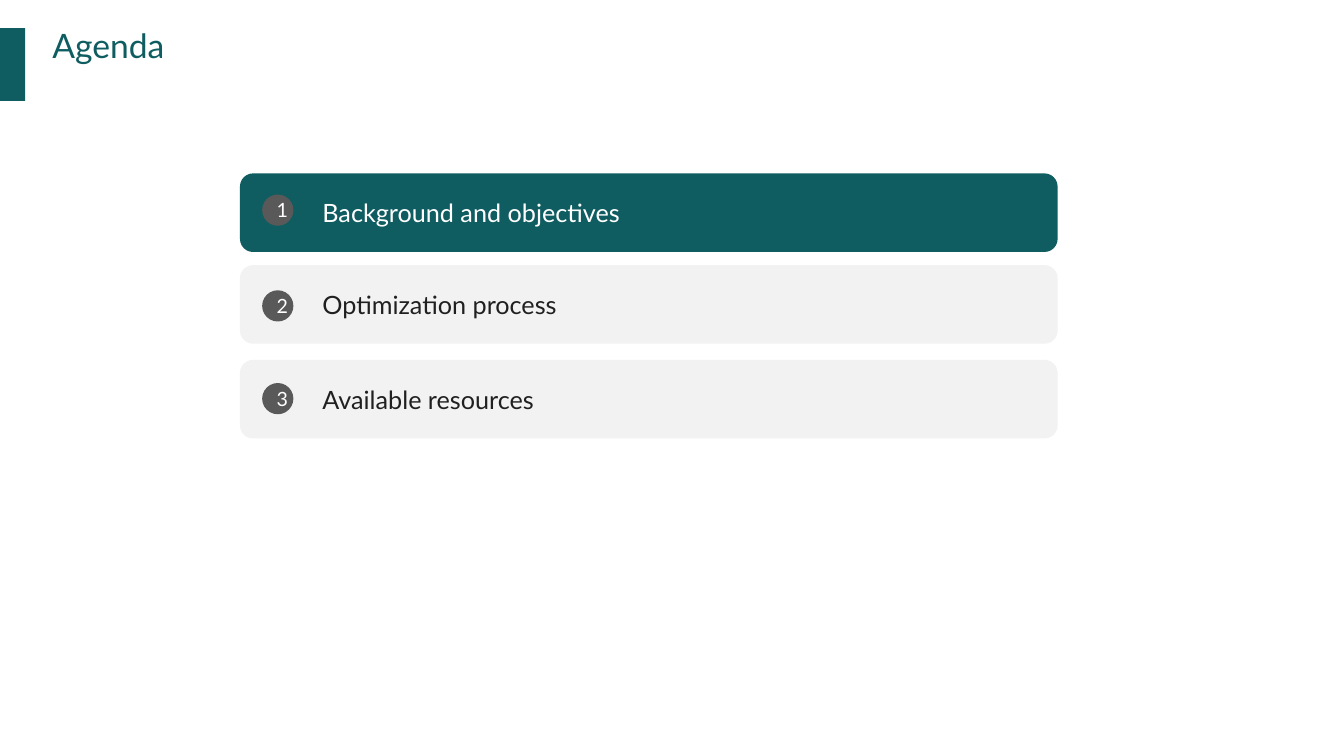
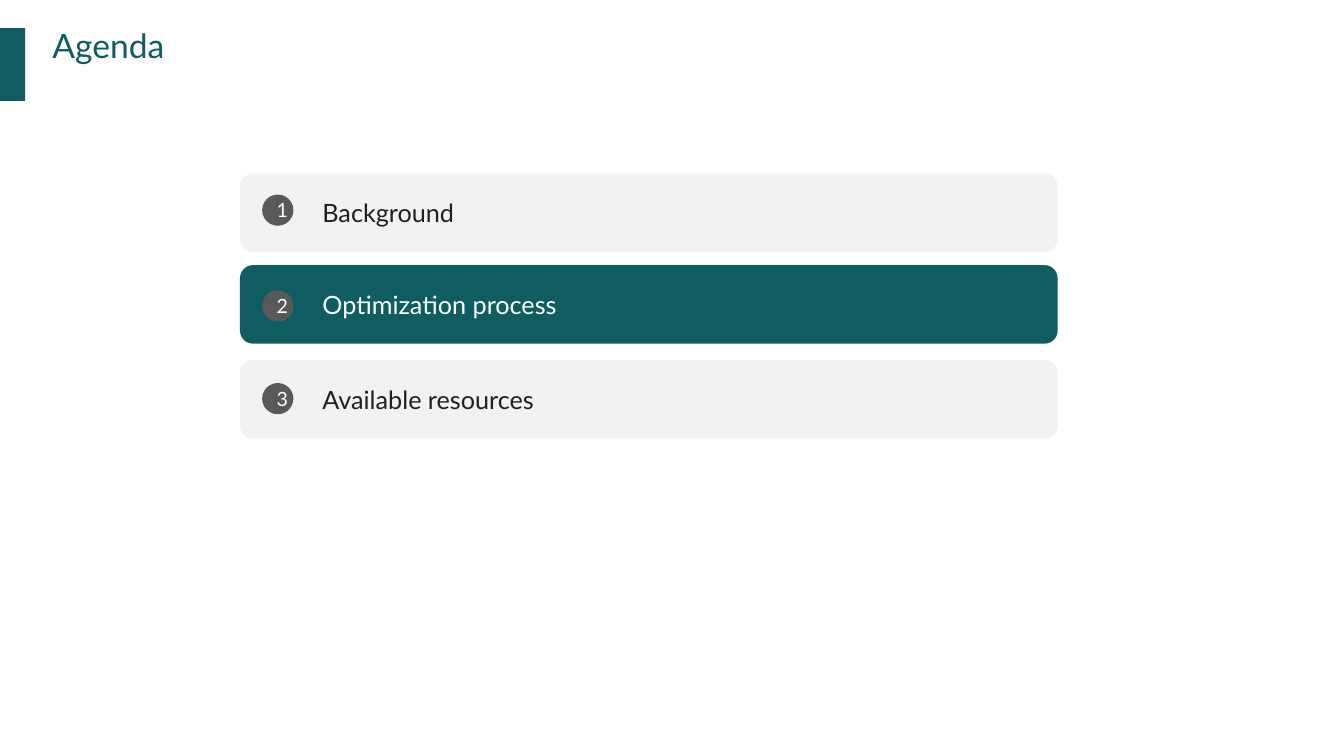
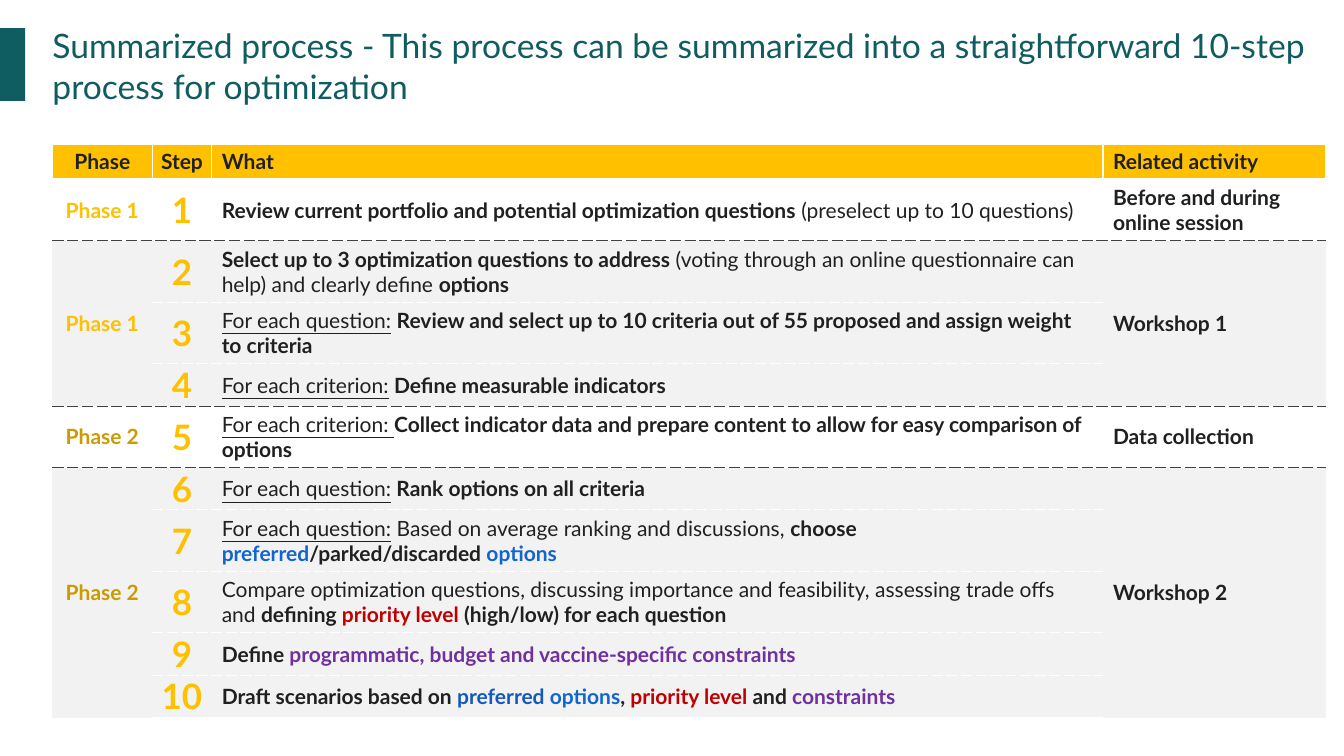
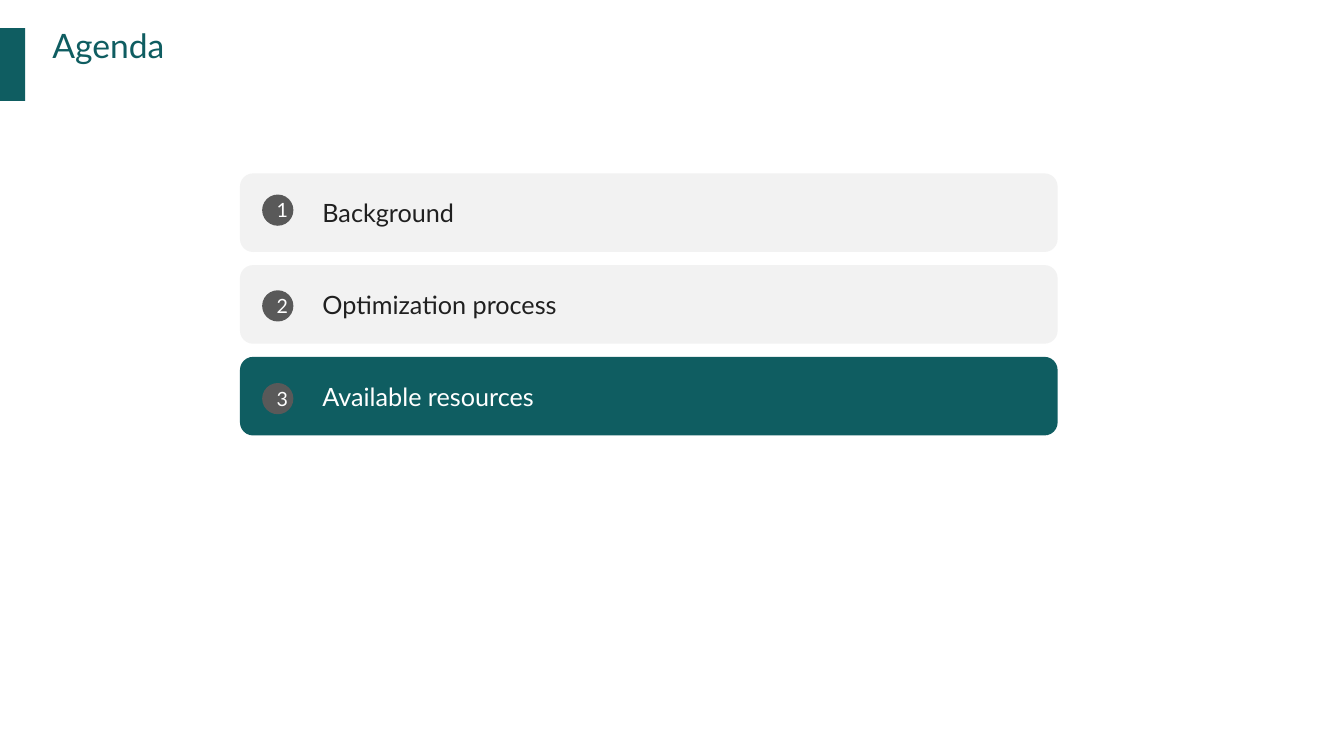
from pptx import Presentation
from pptx.dml.color import RGBColor
from pptx.enum.shapes import MSO_SHAPE
from pptx.enum.text import MSO_ANCHOR, PP_ALIGN
from pptx.oxml.ns import qn
from pptx.util import Inches, Pt
from lxml.etree import SubElement

FONT = "Lato"
TEAL = RGBColor(0x0F, 0x5D, 0x61)
WHITE = RGBColor(0xFF, 0xFF, 0xFF)
LIGHT = RGBColor(0xF2, 0xF2, 0xF2)
INK = RGBColor(0x20, 0x20, 0x20)
GRAY = RGBColor(0x59, 0x59, 0x59)
RULE = RGBColor(0x41, 0x41, 0x41)
AMBER = RGBColor(0xFF, 0xC0, 0x00)
OCHRE = RGBColor(0xCC, 0x9B, 0x00)
BLUE = RGBColor(0x10, 0x66, 0xD1)
DEEP_BLUE = RGBColor(0x14, 0x5A, 0xBE)
RED = RGBColor(0xC0, 0x00, 0x00)
PURPLE = RGBColor(0x70, 0x30, 0xA0)

AGENDA_BOX = (2.38, 1.72, 8.11, 0.78)
AGENDA_OFFSETS = (0, 0.91, 1.85)
EVEN_OFFSETS = (0, 0.91, 1.82)
BADGE_OFFSETS = (0.21, 1.16, 2.08)
BADGE_SIZE = 0.31

TABLE_BOX = (0.52, 1.43, 12.63, 5.68)
COLUMN_WIDTHS = (0.99, 0.59, 8.84, 2.21)
SHORT, TALL = 0.42, 0.61
ROW_HEIGHTS = (0.35, TALL, TALL, TALL, SHORT, TALL, SHORT, TALL, TALL, SHORT, SHORT)
HEADERS = ("Phase", "Step", "What", "Related activity")

HEADER_EDGE = (WHITE, 1, "solid")
HEADER_BASE = (WHITE, 3, "solid")
STEP_EDGE = (WHITE, 0.75, "sysDash")
GROUP_EDGE = (RULE, 0.75, "sysDash")


def strong(text, color=INK):
    return text, color, True, False


def plain(text):
    return text, INK, False, False


def under(text):
    return text, INK, False, True


GROUPS = (
    ("Phase 1", AMBER, WHITE, "Before and during online session", (
        (strong("Review current portfolio and potential optimization questions "),
         plain("(preselect up to 10 questions)")),
    )),
    ("Phase 1", AMBER, LIGHT, "Workshop 1", (
        (strong("Select up to 3 optimization questions to address "),
         plain("(voting through an online questionnaire can help) and clearly define "),
         strong("options")),
        (under("For each question:"), plain(" "),
         strong("Review and select up to 10 criteria out of 55 proposed and assign weight to criteria")),
        (under("For each criterion:"), plain(" "), strong("Define measurable indicators")),
    )),
    ("Phase 2", OCHRE, WHITE, "Data collection", (
        (under("For each criterion: "),
         strong("Collect indicator data and prepare content to allow for easy comparison of options")),
    )),
    ("Phase 2", OCHRE, LIGHT, "Workshop 2", (
        (under("For each question:"), strong(" Rank options on all criteria")),
        (under("For each question:"), plain(" Based on average ranking and discussions, "),
         strong("choose "), strong("preferred", BLUE), strong("/parked/discarded "),
         strong("options", BLUE)),
        (plain("Compare optimization questions, discussing importance and feasibility, "
               "assessing trade offs and "),
         strong("defining "), strong("priority level ", RED),
         strong("(high/low) for each question")),
        (strong("Define "),
         strong("programmatic, budget and vaccine-specific constraints", PURPLE)),
        (strong("Draft scenarios based on "), strong("preferred ", DEEP_BLUE),
         strong("options", BLUE), strong(", "), strong("priority level ", RED),
         strong("and "), strong("constraints", PURPLE)),
    )),
)


def write(paragraph, runs, size):
    for text, color, bold, underline in runs:
        run = paragraph.add_run()
        run.text = text
        run.font.name = FONT
        run.font.size = Pt(size)
        run.font.color.rgb = color
        run.font.bold = bold
        run.font.underline = underline


def add_block(slide, preset, box, fill):
    shape = slide.shapes.add_shape(preset, *map(Inches, box))
    shape.shadow.inherit = False
    shape.fill.solid()
    shape.fill.fore_color.rgb = fill
    shape.line.fill.background()
    return shape


def add_titled_slide(presentation, title):
    slide = presentation.slides.add_slide(presentation.slide_layouts[6])
    add_block(slide, MSO_SHAPE.RECTANGLE, (-0.01, 0.28, 0.26, 0.72), TEAL)
    text_frame = slide.shapes.add_textbox(*map(Inches, (0.52, 0.25, 12.55, 0.8))).text_frame
    text_frame.word_wrap = True
    text_frame.margin_left = text_frame.margin_right = 0
    text_frame.margin_top = text_frame.margin_bottom = 0
    write(text_frame.paragraphs[0], [(title, TEAL, False, False)], 24)
    return slide


def add_agenda(slide, box, items, active, offsets):
    left, top, width, height = box
    for index, (item, offset) in enumerate(zip(items, offsets)):
        fill, color = (TEAL, WHITE) if index == active else (LIGHT, INK)
        bar = add_block(slide, MSO_SHAPE.ROUNDED_RECTANGLE, (left, top + offset, width, height), fill)
        bar.text_frame.margin_left = Inches(0.78)
        bar.text_frame.vertical_anchor = MSO_ANCHOR.MIDDLE
        paragraph = bar.text_frame.paragraphs[0]
        paragraph.alignment = PP_ALIGN.LEFT
        write(paragraph, [(item, color, False, False)], 18)
    for number, offset in enumerate(BADGE_OFFSETS[:len(items)], 1):
        badge = add_block(slide, MSO_SHAPE.OVAL,
                          (left + 0.22, top + offset, BADGE_SIZE, BADGE_SIZE), GRAY)
        badge.text_frame.vertical_anchor = MSO_ANCHOR.MIDDLE
        paragraph = badge.text_frame.paragraphs[0]
        paragraph.alignment = PP_ALIGN.CENTER
        write(paragraph, [(str(number), WHITE, False, False)], 14)


def set_borders(cell, left=None, right=None, top=None, bottom=None):
    properties = cell._tc.get_or_add_tcPr()
    for tag, edge in zip(("a:lnL", "a:lnR", "a:lnT", "a:lnB"), (left, right, top, bottom)):
        line = SubElement(properties, qn(tag))
        if edge is None:
            SubElement(line, qn("a:noFill"))
            continue
        color, width, dash = edge
        line.set("w", str(Pt(width)))
        SubElement(SubElement(line, qn("a:solidFill")), qn("a:srgbClr")).set("val", str(color))
        SubElement(line, qn("a:prstDash")).set("val", dash)


def style_cell(cell, column, fill, **edges):
    set_borders(cell, **edges)
    cell.fill.solid()
    cell.fill.fore_color.rgb = fill
    cell.vertical_anchor = MSO_ANCHOR.MIDDLE
    if column < 2:
        cell.margin_left = cell.margin_right = cell.margin_top = cell.margin_bottom = 0
        cell.text_frame.paragraphs[0].alignment = PP_ALIGN.CENTER


def fill_group(table, first, group, top_edge, bottom_edge):
    phase, phase_color, fill, activity, steps = group
    last = first + len(steps) - 1
    for row, runs in enumerate(steps, first):
        for column in range(len(HEADERS)):
            inner = STEP_EDGE if column in (1, 2) else None
            style_cell(table.cell(row, column), column, fill,
                       top=top_edge if row == first else inner,
                       bottom=bottom_edge if row == last else inner)
        write(table.cell(row, 1).text_frame.paragraphs[0], [strong(str(row), AMBER)], 25)
        write(table.cell(row, 2).text_frame.paragraphs[0], runs, 15)
    for column, run in ((0, strong(phase, phase_color)), (3, strong(activity))):
        cell = table.cell(first, column)
        write(cell.text_frame.paragraphs[0], [run], 15)
        if last > first:
            cell.merge(table.cell(last, column))
    return last + 1


def add_process_table(slide, box):
    frame = slide.shapes.add_table(len(ROW_HEIGHTS), len(COLUMN_WIDTHS), *map(Inches, box))
    table = frame.table
    table.horz_banding = False
    for column, width in zip(table.columns, COLUMN_WIDTHS):
        column.width = Inches(width)
    for row, height in zip(table.rows, ROW_HEIGHTS):
        row.height = Inches(height)
    for column, header in enumerate(HEADERS):
        cell = table.cell(0, column)
        style_cell(cell, column, AMBER, left=HEADER_EDGE, right=HEADER_EDGE,
                   top=HEADER_EDGE, bottom=HEADER_BASE)
        write(cell.text_frame.paragraphs[0], [strong(header)], 15)
    row, top_edge = 1, HEADER_BASE
    for group in GROUPS:
        bottom_edge = HEADER_EDGE if group is GROUPS[-1] else GROUP_EDGE
        row = fill_group(table, row, group, top_edge, bottom_edge)
        top_edge = bottom_edge


def add_agenda_slide(presentation, first_item, active, offsets=AGENDA_OFFSETS):
    slide = add_titled_slide(presentation, "Agenda")
    items = (first_item, "Optimization process", "Available resources")
    add_agenda(slide, AGENDA_BOX, items, active, offsets)


def add_process_slide(presentation):
    slide = add_titled_slide(
        presentation,
        "Summarized process - This process can be summarized into a straightforward "
        "10-step process for optimization")
    add_process_table(slide, TABLE_BOX)


def main():
    presentation = Presentation()
    presentation.slide_width = Inches(13.33)
    presentation.slide_height = Inches(7.5)
    add_agenda_slide(presentation, "Background and objectives", 0)
    add_agenda_slide(presentation, "Background", 1)
    add_process_slide(presentation)
    add_agenda_slide(presentation, "Background", 2, EVEN_OFFSETS)
    presentation.save("out.pptx")


if __name__ == "__main__":
    main()
